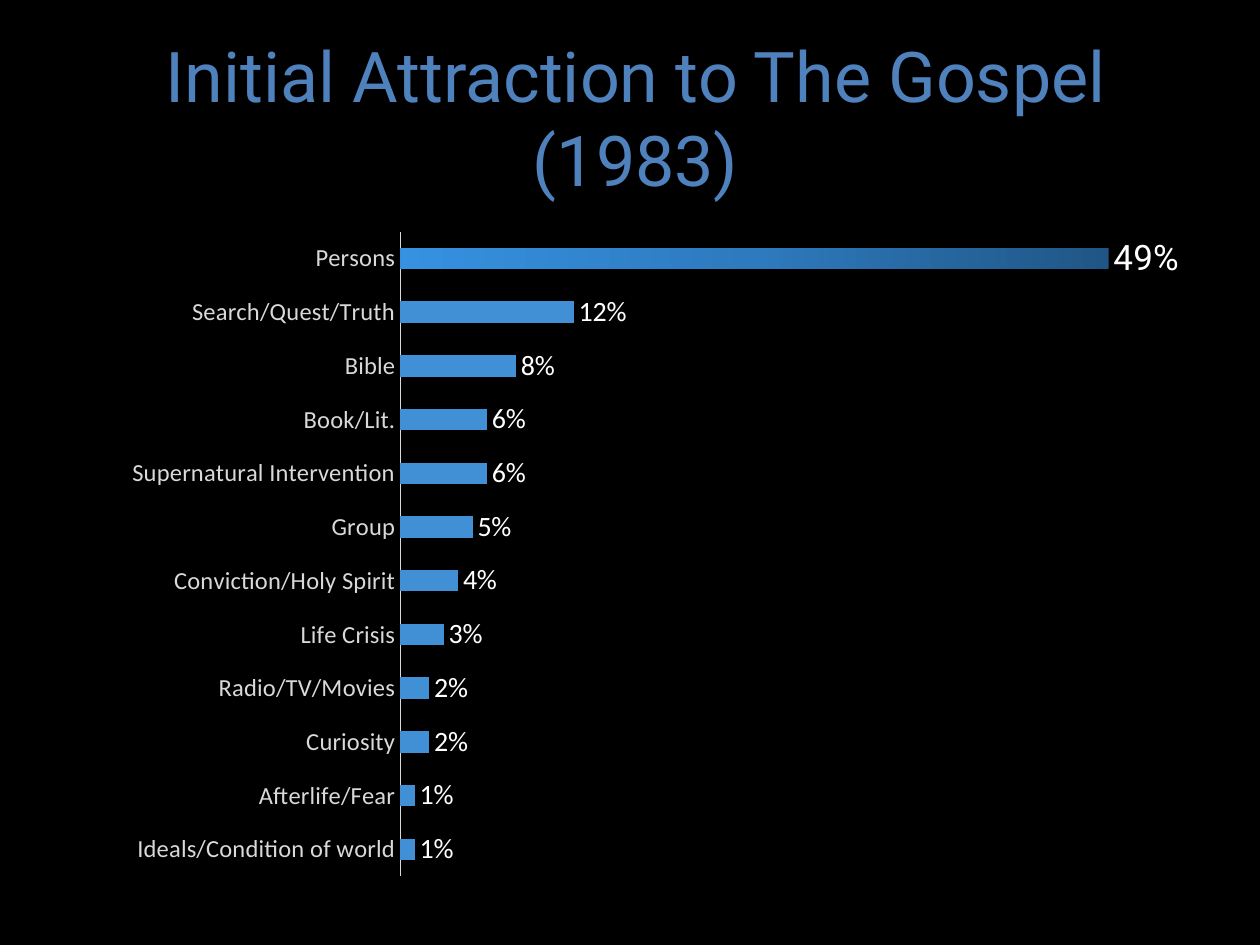
from dataclasses import dataclass

from lxml.etree import SubElement
from pptx import Presentation
from pptx.chart.chart import Chart
from pptx.chart.data import CategoryChartData
from pptx.dml.color import RGBColor
from pptx.enum.chart import XL_CHART_TYPE, XL_LABEL_POSITION, XL_TICK_LABEL_POSITION, XL_TICK_MARK
from pptx.enum.text import MSO_ANCHOR, PP_ALIGN
from pptx.oxml.ns import qn
from pptx.slide import Slide
from pptx.text.text import Font
from pptx.util import Inches, Pt


@dataclass(frozen=True)
class Theme:
    back: str = "000000"
    title: str = "4F81BD"
    axis: str = "D9D9D9"
    label: str = "FFFFFF"
    bar: str = "4190D6"
    gradient: tuple = ((0, "205685"), (50, "2D7ABE"), (100, "3691E1"))
    head_font: str = "Roboto"
    body_font: str = "Calibri"
    title_size: int = 40
    lead_size: int = 20
    label_size: int = 16
    axis_size: int = 14


@dataclass(frozen=True)
class Reason:
    name: str
    share: float


THEME = Theme()
REASONS = [
    Reason("Persons", 0.49),
    Reason("Search/Quest/Truth", 0.12),
    Reason("Bible", 0.08),
    Reason("Book/Lit.", 0.06),
    Reason("Supernatural Intervention", 0.06),
    Reason("Group", 0.05),
    Reason("Conviction/Holy Spirit", 0.04),
    Reason("Life Crisis", 0.03),
    Reason("Radio/TV/Movies", 0.02),
    Reason("Curiosity", 0.02),
    Reason("Afterlife/Fear", 0.01),
    Reason("Ideals/Condition of world", 0.01),
]


def set_font(font: Font, name: str, size: int, color: str) -> None:
    font.name, font.size = name, Pt(size)
    font.color.rgb = RGBColor.from_string(color)


def add_title(s: Slide, text: str) -> None:
    sp = s.shapes.title
    sp.left, sp.top, sp.width, sp.height = map(Inches, (0.34, 0.3, 9.41, 1.25))
    tf = sp.text_frame
    tf.text = text
    tf.word_wrap = True
    tf.vertical_anchor = MSO_ANCHOR.MIDDLE
    p = tf.paragraphs[0]
    p.alignment = PP_ALIGN.CENTER
    set_font(p.runs[0].font, THEME.head_font, THEME.title_size, THEME.title)


def place_plot(chart: Chart, x: float, y: float, w: float, h: float) -> None:
    area = chart.element.find(".//" + qn("c:plotArea"))
    layout = area.find(qn("c:layout"))
    if layout is None:
        layout = SubElement(area, qn("c:layout"))
        area.insert(0, layout)
    manual = SubElement(layout, qn("c:manualLayout"))
    settings = {"layoutTarget": "inner", "xMode": "edge", "yMode": "edge", "x": x, "y": y, "w": w, "h": h}
    for tag, value in settings.items():
        SubElement(manual, qn(f"c:{tag}")).set("val", str(value))


def format_axes(chart: Chart) -> None:
    cat = chart.category_axis
    cat.reverse_order = True
    cat.has_major_gridlines = False
    cat.major_tick_mark = cat.minor_tick_mark = XL_TICK_MARK.NONE
    cat.tick_label_position = XL_TICK_LABEL_POSITION.NEXT_TO_AXIS
    set_font(cat.tick_labels.font, THEME.body_font, THEME.axis_size, THEME.axis)
    cat.format.line.color.rgb = RGBColor.from_string(THEME.axis)
    cat.format.line.width = Pt(0.75)
    val = chart.value_axis
    val.minimum_scale, val.maximum_scale = 0, 0.6
    val.has_major_gridlines = False
    val.tick_labels.number_format = "0%"
    val.tick_labels.number_format_is_linked = False
    val.visible = False


def format_bars(chart: Chart) -> None:
    plot = chart.plots[0]
    plot.gap_width, plot.overlap = 150, -25
    plot.vary_by_categories = False
    series = plot.series[0]
    series.invert_if_negative = False
    series.format.fill.solid()
    series.format.fill.fore_color.rgb = RGBColor.from_string(THEME.bar)
    labels = series.data_labels
    labels.show_value = True
    labels.number_format, labels.number_format_is_linked = "0%", False
    labels.position = XL_LABEL_POSITION.OUTSIDE_END
    set_font(labels.font, THEME.body_font, THEME.label_size, THEME.label)


def highlight_lead(chart: Chart) -> None:
    point = chart.plots[0].series[0].points[0]
    fill = point.format.fill
    fill.gradient()
    fill.gradient_angle = 180
    stops = chart.element.find(".//" + qn("a:gsLst"))
    stops.clear()
    for percent, color in THEME.gradient:
        stop = SubElement(stops, qn("a:gs"), pos=str(percent * 1000))
        SubElement(stop, qn("a:srgbClr"), val=color)
    tf = point.data_label.text_frame
    tf.text = f"{REASONS[0].share:.0%}"
    set_font(tf.paragraphs[0].runs[0].font, THEME.head_font, THEME.lead_size, THEME.label)
    point.data_label.position = XL_LABEL_POSITION.OUTSIDE_END


def add_reason_chart(s: Slide) -> None:
    data = CategoryChartData(number_format="0%")
    data.categories = [reason.name for reason in REASONS]
    data.add_series("Series 1", [reason.share for reason in REASONS])
    box = map(Inches, (0, 1.68, 10.59, 5.28))
    chart = s.shapes.add_chart(XL_CHART_TYPE.BAR_CLUSTERED, *box, data).chart
    chart.has_legend = chart.has_title = False
    set_font(chart.font, THEME.body_font, THEME.lead_size, THEME.back)
    place_plot(chart, 0.3, 0.03, 0.65, 0.97)
    format_axes(chart)
    format_bars(chart)
    highlight_lead(chart)


def main() -> None:
    """Build the slide on the first attraction to the gospel."""
    prs = Presentation()
    prs.slide_width, prs.slide_height = Inches(10), Inches(7.5)
    s = prs.slides.add_slide(prs.slide_layouts[5])
    s.background.fill.solid()
    s.background.fill.fore_color.rgb = RGBColor.from_string(THEME.back)
    add_title(s, "Initial Attraction to The Gospel (1983)")
    add_reason_chart(s)
    prs.save("out.pptx")


if __name__ == "__main__":
    main()
